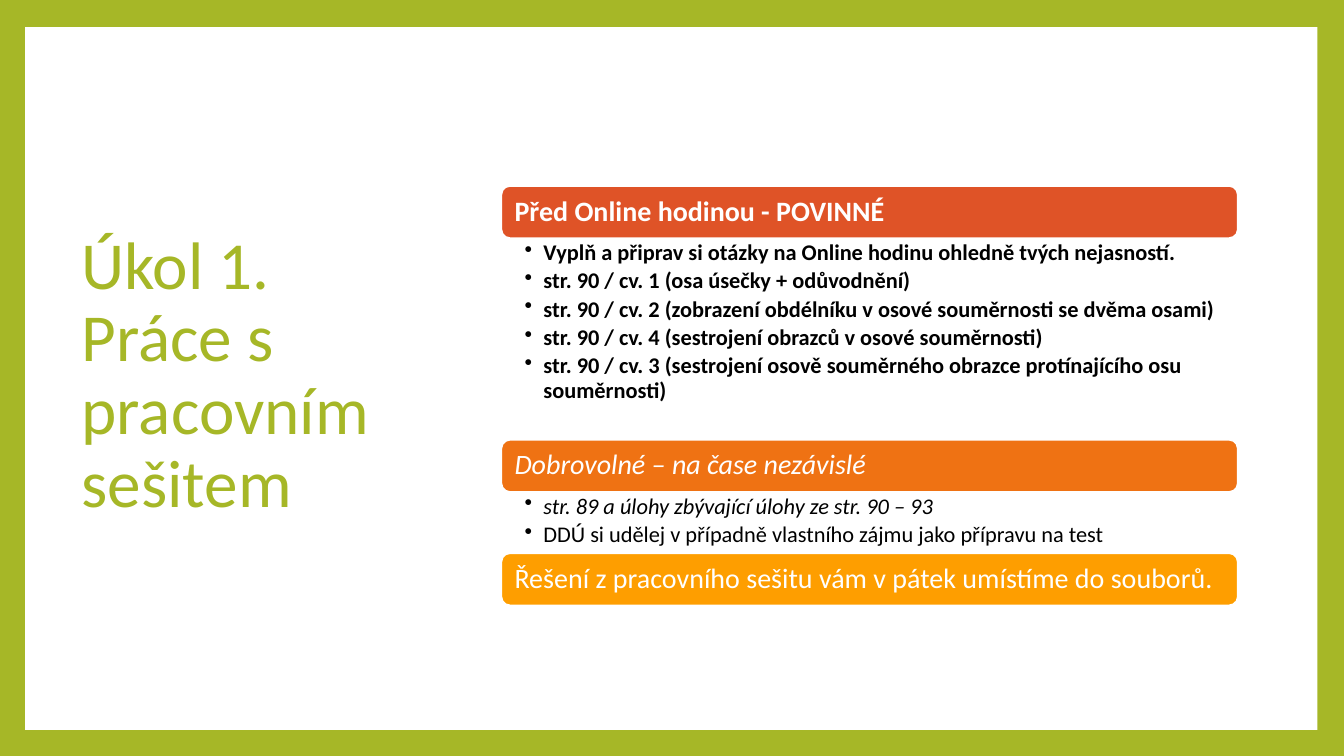
from dataclasses import dataclass

from lxml import etree
from pptx import Presentation
from pptx.dml.color import RGBColor
from pptx.enum.shapes import MSO_SHAPE
from pptx.enum.text import MSO_ANCHOR, MSO_AUTO_SIZE, PP_ALIGN
from pptx.oxml.ns import qn
from pptx.util import Pt

RECTANGLE, ROUNDED = MSO_SHAPE.RECTANGLE, MSO_SHAPE.ROUNDED_RECTANGLE
TOP, MIDDLE = MSO_ANCHOR.TOP, MSO_ANCHOR.MIDDLE
NO_AUTOFIT = MSO_AUTO_SIZE.NONE
LEFT = PP_ALIGN.LEFT
TITLE_ONLY = 5

BOLD, ITALIC, PLAIN = {"bold": True}, {"italic": True}, {}


@dataclass(frozen=True)
class Theme:
    font: str = "Calibri"
    green: str = "A6B727"
    white: str = "FFFFFF"
    black: str = "000000"
    red: str = "DF5327"
    orange: str = "EF7213"
    amber: str = "FE9E00"
    title_size: int = 48
    heading_size: int = 20
    item_size: int = 16


class TaskSlide:
    def __init__(self, slide, theme):
        self.slide = slide
        self.theme = theme

    def background(self, color):
        fill = self.slide.background.fill
        fill.solid()
        fill.fore_color.rgb = RGBColor.from_string(color)

    def box(self, kind, bounds, color, outline=None):
        shape = self.slide.shapes.add_shape(kind, *map(Pt, bounds))
        shape.shadow.inherit = False
        shape.fill.solid()
        shape.fill.fore_color.rgb = RGBColor.from_string(color)
        if outline:
            shape.line.color.rgb = RGBColor.from_string(outline)
            shape.line.width = Pt(1.5)
        else:
            shape.line.fill.background()
        return shape

    def frame(self, shape, anchor, insets):
        """Set wrapping, anchor and insets (left, top, right, bottom)."""
        left, top, right, bottom = map(Pt, insets)
        formats = {
            "word_wrap": True, "auto_size": NO_AUTOFIT, "vertical_anchor": anchor,
            "margin_left": left, "margin_top": top,
            "margin_right": right, "margin_bottom": bottom,
        }
        for name, value in formats.items():
            setattr(shape.text_frame, name, value)
        return shape.text_frame

    def set_text(self, paragraph, text, size, color, emphasis=PLAIN, space_after=0):
        spacing = {"alignment": LEFT, "line_spacing": 0.9,
                   "space_before": Pt(0), "space_after": Pt(space_after)}
        for name, value in spacing.items():
            setattr(paragraph, name, value)
        run = paragraph.add_run()
        run.text = text
        for name, value in {"name": self.theme.font, "size": Pt(size), **emphasis}.items():
            setattr(run.font, name, value)
        run.font.color.rgb = RGBColor.from_string(color)

    def title(self, text, bounds):
        heading = self.slide.shapes.title
        for name, value in zip(("left", "top", "width", "height"), bounds):
            setattr(heading, name, Pt(value))
        frame = self.frame(heading, MIDDLE, (7.2, 3.6, 14.4, 3.6))
        self.set_text(frame.paragraphs[0], text, self.theme.title_size, self.theme.green)

    def panel(self, bounds):
        """Place the white page area behind the title."""
        page = self.box(RECTANGLE, bounds, self.theme.white)
        self.slide.shapes.title._element.addprevious(page._element)

    def bar(self, text, bounds, color, emphasis):
        bar = self.box(ROUNDED, bounds, color, self.theme.white)
        frame = self.frame(bar, MIDDLE, (7.7, 6, 7.7, 6))
        self.set_text(frame.paragraphs[0], text, self.theme.heading_size,
                      self.theme.white, emphasis)

    def bullets(self, items, bounds):
        listing = self.slide.shapes.add_textbox(*map(Pt, bounds))
        frame = self.frame(listing, TOP, (16.7, 1.9, 11.5, 1.9))
        for index, (text, emphasis) in enumerate(items):
            paragraph = frame.add_paragraph() if index else frame.paragraphs[0]
            self.set_text(paragraph, text, self.theme.item_size, self.theme.black,
                          emphasis, 3)
            paragraph.level = 1
            properties = paragraph._p.get_or_add_pPr()
            properties.set("marL", str(Pt(13.5)))
            properties.set("indent", str(Pt(-13.5)))
            etree.SubElement(properties, qn("a:buChar")).set("char", "•")


def main():
    theme = Theme()
    deck = Presentation()
    deck.slide_width, deck.slide_height = Pt(960), Pt(540)
    page = TaskSlide(deck.slides.add_slide(deck.slide_layouts[TITLE_ONLY]), theme)

    page.background(theme.green)
    page.panel((18, 19.4, 923, 502))
    page.title("Úkol 1. Práce s pracovním sešitem", (51.1, 48.2, 265, 441.4))

    required = [(text, BOLD) for text in (
        "Vyplň a připrav si otázky na Online hodinu ohledně tvých nejasností.",
        "str. 90 / cv. 1 (osa úsečky + odůvodnění)",
        "str. 90 / cv. 2 (zobrazení obdélníku v osové souměrnosti se dvěma osami)",
        "str. 90 / cv. 4 (sestrojení obrazců v osové souměrnosti)",
        "str. 90 / cv. 3 (sestrojení osově souměrného obrazce protínajícího osu souměrnosti)",
    )]
    voluntary = [
        ("str. 89 a úlohy zbývající úlohy ze str. 90 – 93", ITALIC),
        ("DDÚ si udělej v případně vlastního zájmu jako přípravu na test", PLAIN),
    ]
    sections = [
        ("Před Online hodinou - POVINNÉ", theme.red, BOLD, required, 143.7),
        ("Dobrovolné – na čase nezávislé", theme.orange, ITALIC, voluntary, 43.4),
        ("Řešení z pracovního sešitu vám v pátek umístíme do souborů.",
         theme.amber, PLAIN, [], 0),
    ]

    left, top, width, bar_height = 358, 132.7, 526.3, 37.6
    for heading, color, emphasis, items, list_height in sections:
        page.bar(heading, (left, top, width, bar_height), color, emphasis)
        top += bar_height
        if items:
            page.bullets(items, (left, top, width, list_height))
            top += list_height

    deck.save("out.pptx")


if __name__ == "__main__":
    main()
